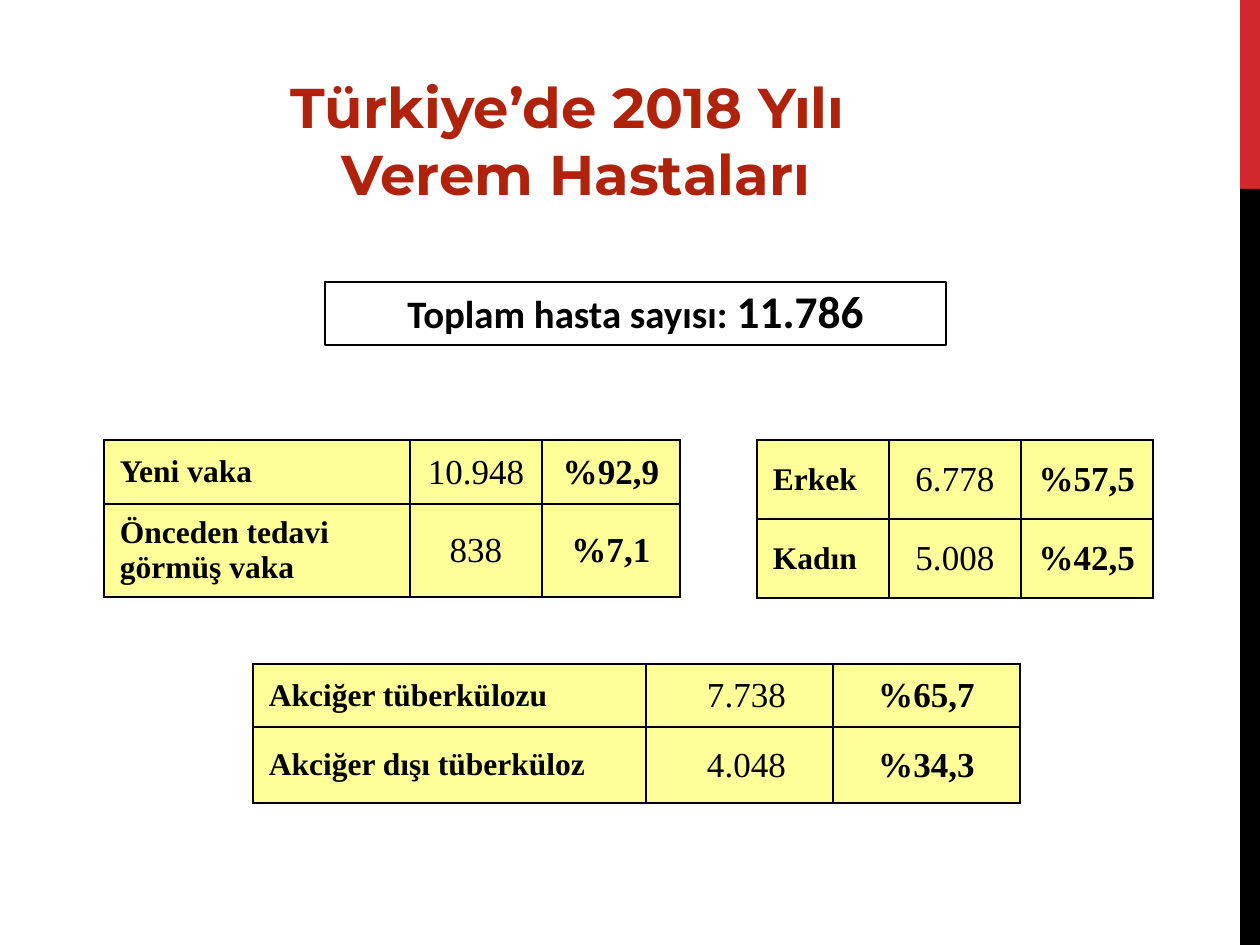
from lxml.etree import SubElement
from pptx import Presentation
from pptx.dml.color import RGBColor
from pptx.enum.shapes import MSO_SHAPE
from pptx.enum.text import MSO_ANCHOR, PP_ALIGN
from pptx.oxml.ns import qn
from pptx.util import Emu, Pt

RED = RGBColor(0xD1, 0x28, 0x2E)
DARK_RED = RGBColor(0xAF, 0x22, 0x0B)
BLACK = RGBColor(0, 0, 0)
WHITE = RGBColor(0xFF, 0xFF, 0xFF)
YELLOW = RGBColor(0xFF, 0xFF, 0x99)

TITLE_LINES = ["Türkiye’de 2018 Yılı ", "Verem Hastaları"]
TOTAL = [("Toplam hasta sayısı: ", 22.2), ("11.786", 25.9)]

# Each table: position, column widths, row heights (px), left inset of the counts, rows
TABLES = [
    dict(at=(104, 440), columns=(306, 132, 138), heights=(64, 93), count_inset=1,
         rows=[("Yeni vaka", "10.948", "%92,9"),
               ("Önceden tedavi görmüş vaka", "838", "%7,1")]),
    dict(at=(757, 440), columns=(132, 132, 132), heights=(79, 79), count_inset=1,
         rows=[("Erkek", "6.778", "%57,5"),
               ("Kadın", "5.008", "%42,5")]),
    dict(at=(253, 664), columns=(393, 187, 187), heights=(63, 76), count_inset=15,
         rows=[("Akciğer tüberkülozu", "7.738", "%65,7"),
               ("Akciğer dışı tüberküloz", "4.048", "%34,3")]),
]


def px(length):
    return Emu(round(length * 914400 / 126))


def style_font(font, name, size, color, bold=True):
    font.name, font.size, font.bold = name, Pt(size), bold
    font.color.rgb = color


def add_rectangle(slide, box, fill):
    shape = slide.shapes.add_shape(MSO_SHAPE.RECTANGLE, *map(px, box))
    shape.shadow.inherit = False
    shape.fill.solid()
    shape.fill.fore_color.rgb = fill
    shape.line.fill.background()
    return shape


def add_borders(cell):
    properties = cell._tc.get_or_add_tcPr()
    for position, side in enumerate(("a:lnL", "a:lnR", "a:lnT", "a:lnB")):
        line = properties.makeelement(qn(side), {"w": str(Pt(1))})
        fill = SubElement(line, qn("a:solidFill"))
        SubElement(fill, qn("a:srgbClr"), val=str(BLACK))
        properties.insert(position, line)


def format_cell(cell, text, column, count_inset):
    is_label = column == 0
    left = 16 if is_label else count_inset if column == 1 else 1
    insets = (left, 6, 16, 6) if is_label else (left, 1, 1, 0)
    (cell.margin_left, cell.margin_top,
     cell.margin_right, cell.margin_bottom) = map(px, insets)
    cell.vertical_anchor = MSO_ANCHOR.MIDDLE
    cell.fill.solid()
    cell.fill.fore_color.rgb = YELLOW
    add_borders(cell)
    cell.text_frame.text = text
    paragraph = cell.text_frame.paragraphs[0]
    paragraph.alignment = PP_ALIGN.LEFT if is_label else PP_ALIGN.CENTER
    style_font(paragraph.runs[0].font, "Times New Roman",
               18 if is_label else 20, BLACK, bold=column != 1)


def add_data_table(slide, at, columns, heights, count_inset, rows):
    frame = slide.shapes.add_table(len(rows), len(columns), *map(px, at),
                                   px(sum(columns)), px(sum(heights)))
    table = frame.table
    table.first_row = table.horz_banding = False
    for column, width in zip(table.columns, columns):
        column.width = px(width)
    for row, height in zip(table.rows, heights):
        row.height = px(height)
    for r, values in enumerate(rows):
        for c, text in enumerate(values):
            format_cell(table.cell(r, c), text, c, count_inset)


def main():
    presentation = Presentation()
    presentation.slide_width, presentation.slide_height = px(1260), px(945)
    slide = presentation.slides.add_slide(presentation.slide_layouts[5])

    # Side stripe
    add_rectangle(slide, (1240, 0, 20, 189), RED)
    add_rectangle(slide, (1240, 189, 20, 756), BLACK)

    # Title
    title = slide.shapes.title
    title.left, title.top, title.width, title.height = map(px, (105, 66, 942, 148))
    title.text_frame.text = "\n".join(TITLE_LINES)
    title.text_frame.vertical_anchor = MSO_ANCHOR.TOP
    for paragraph in title.text_frame.paragraphs:
        paragraph.alignment = PP_ALIGN.CENTER
        style_font(paragraph.runs[0].font, "Montserrat", 32, DARK_RED)

    # Total number of patients
    total_box = add_rectangle(slide, (325, 282, 621, 63), WHITE)
    total_box.line.color.rgb = BLACK
    total_box.line.width = Pt(0.75)
    total_box.text_frame.vertical_anchor = MSO_ANCHOR.MIDDLE
    paragraph = total_box.text_frame.paragraphs[0]
    paragraph.alignment = PP_ALIGN.CENTER
    paragraph.line_spacing = 0.9
    for text, size in TOTAL:
        run = paragraph.add_run()
        run.text = text
        style_font(run.font, "Calibri", size, BLACK)

    # Breakdown tables
    for table in TABLES:
        add_data_table(slide, **table)

    presentation.save("out.pptx")


if __name__ == "__main__":
    main()
